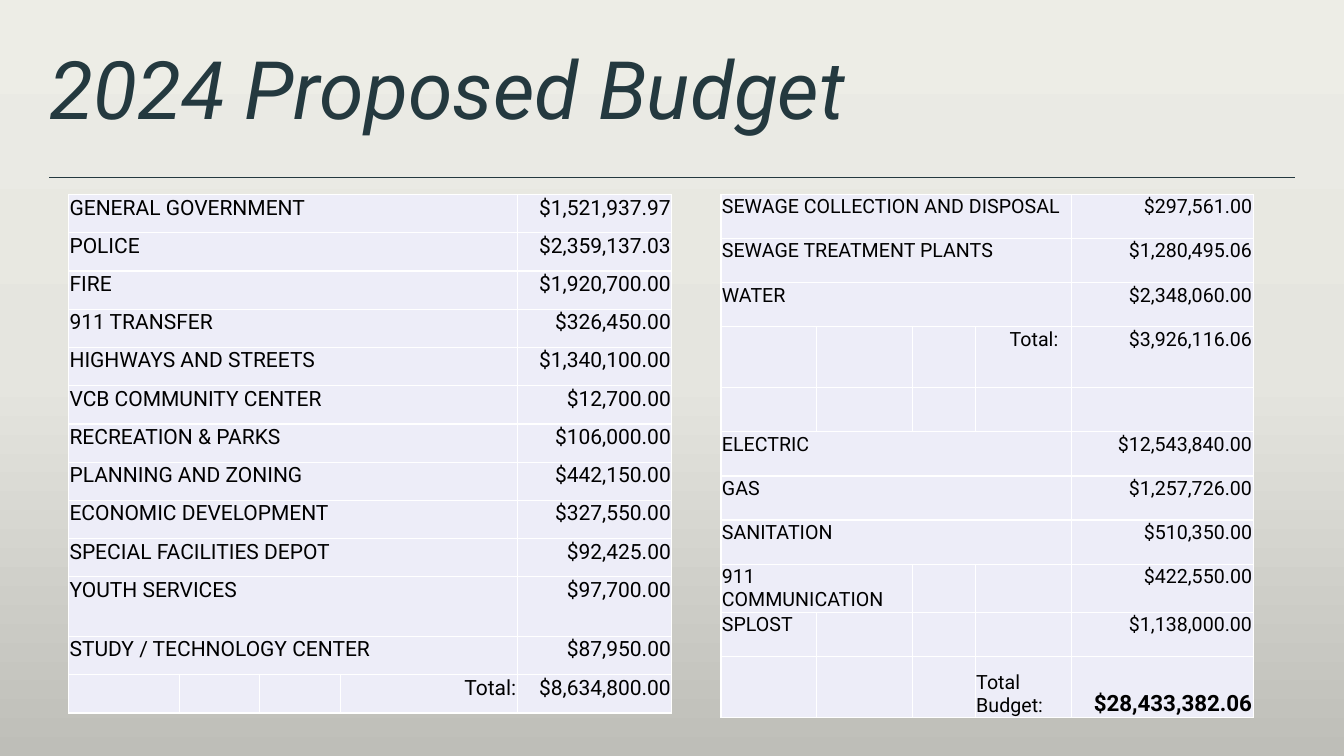
from copy import deepcopy
from lxml.etree import SubElement
from pptx import Presentation
from pptx.dml.color import RGBColor as Color
from pptx.enum.shapes import MSO_CONNECTOR as Connector
from pptx.enum.text import MSO_ANCHOR as Anchor, PP_ALIGN as Align
from pptx.oxml.ns import qn
from pptx.util import Pt

FONT = "Roboto"
COLORS = {"ink": "24393F", "text": "000000", "cell": "EDEDF8", "border": "FFFFFF"}
BACKGROUND = [(0, "EDEDE6"), (0.5, "E5E5DF"), (1, "BEBEB8")]
TITLE = "2024 Proposed Budget"
TOP = 139
INSET = 0.7
LAST_COLUMN = 4

WIDE = {"span": 4}
SUM_LABEL = {"column": 3, "align": Align.RIGHT}
SUM_INDENT = {"column": 3, "indent": 24.6}
GRAND_TOTAL = {"column": 3, "anchor": Anchor.BOTTOM, "bold": True, "size": 16}

TABLES = [
    {
        "left": 515, "size": 14, "columns": [68.2, 68.5, 45, 68.5, 130],
        "row": 31.5, "tall": {3: 43.5, 10: 43.5},
        "lines": [
            ("SEWAGE COLLECTION AND DISPOSAL", "$297,561.00", WIDE),
            ("SEWAGE TREATMENT PLANTS", "$1,280,495.06", WIDE),
            ("WATER", "$2,348,060.00", WIDE),
            ("Total:", "$3,926,116.06", SUM_INDENT),
            ("", "", {}),
            ("ELECTRIC", "$12,543,840.00", WIDE),
            ("GAS", "$1,257,726.00", WIDE),
            ("SANITATION", "$510,350.00", WIDE),
            ("911 COMMUNICATION", "$422,550.00", {"span": 2}),
            ("SPLOST", "$1,138,000.00", {}),
            ("Total Budget:", "$28,433,382.06", GRAND_TOTAL),
        ],
    },
    {
        "left": 49, "size": 15, "columns": [79.2, 57.4, 57.4, 126.5, 110.5],
        "row": 27.3, "tall": {10: 42.7},
        "lines": [
            ("GENERAL GOVERNMENT", "$1,521,937.97", WIDE),
            ("POLICE", "$2,359,137.03", WIDE),
            ("FIRE", "$1,920,700.00", WIDE),
            ("911 TRANSFER", "$326,450.00", WIDE),
            ("HIGHWAYS AND STREETS", "$1,340,100.00", WIDE),
            ("VCB COMMUNITY CENTER", "$12,700.00", WIDE),
            ("RECREATION & PARKS", "$106,000.00", WIDE),
            ("PLANNING AND ZONING", "$442,150.00", WIDE),
            ("ECONOMIC DEVELOPMENT", "$327,550.00", WIDE),
            ("SPECIAL FACILITIES DEPOT", "$92,425.00", WIDE),
            ("YOUTH SERVICES", "$97,700.00", WIDE),
            ("STUDY / TECHNOLOGY CENTER", "$87,950.00", WIDE),
            ("Total:", "$8,634,800.00", SUM_LABEL),
        ],
    },
]


def write(para, text, color, align=Align.LEFT, **font_values):
    para.alignment = align
    span = para.add_run()
    span.text = text
    span.font.color.rgb = Color.from_string(COLORS[color])
    for name, value in {"name": FONT, **font_values}.items():
        setattr(span.font, name, value)


def paint_background(page):
    fill = page.background.fill
    fill.gradient()
    fill.gradient_angle = 270
    stops = page.element.find(".//" + qn("a:gsLst"))
    stops.append(deepcopy(stops[-1]))
    for stop, (position, color) in zip(fill.gradient_stops, BACKGROUND):
        stop.position = position
        stop.color.rgb = Color.from_string(color)


def add_title(page):
    box = page.shapes.add_textbox(Pt(35.3), Pt(31), Pt(890), Pt(65.5))
    frame = box.text_frame
    values = {"word_wrap": True, "vertical_anchor": Anchor.BOTTOM, "margin_left": 0,
              "margin_right": 0, "margin_top": 0, "margin_bottom": 0}
    for name, value in values.items():
        setattr(frame, name, value)
    write(frame.paragraphs[0], TITLE, "ink", size=Pt(57.6), italic=True)


def add_rule(page):
    rule = page.shapes.add_connector(Connector.STRAIGHT, Pt(35.3), Pt(126.7), Pt(925.2), Pt(126.7))
    rule.line.color.rgb = Color.from_string(COLORS["ink"])
    rule.line.width = Pt(0.5)
    SubElement(rule.element.spPr, qn("a:effectLst"))


def style_cell(cell):
    values = {"margin_left": Pt(INSET), "margin_right": Pt(INSET),
              "margin_top": Pt(INSET), "margin_bottom": 0}
    for name, value in values.items():
        setattr(cell, name, value)
    cell.fill.solid()
    cell.fill.fore_color.rgb = Color.from_string(COLORS["cell"])
    properties = cell.fill._xPr
    for index, side in enumerate(("lnL", "lnR", "lnT", "lnB")):
        border = SubElement(properties, qn("a:" + side), w=str(Pt(1)))
        solid = SubElement(border, qn("a:solidFill"))
        SubElement(solid, qn("a:srgbClr"), val=COLORS["border"])
        properties.insert(index, border)


def add_budget(page, budget):
    lines, widths = budget["lines"], budget["columns"]
    heights = [budget["tall"].get(index, budget["row"]) for index in range(len(lines))]
    table = page.shapes.add_table(len(lines), len(widths), Pt(budget["left"]), Pt(TOP),
                                  Pt(sum(widths)), Pt(sum(heights))).table
    table.first_row = table.horz_banding = False
    for column, width in zip(table.columns, widths):
        column.width = Pt(width)
    for row, height in zip(table.rows, heights):
        row.height = Pt(height)
    for cell in table.iter_cells():
        style_cell(cell)
    for index, (label, amount, look) in enumerate(lines):
        label_cell = table.cell(index, look.get("column", 0))
        amount_cell = table.cell(index, LAST_COLUMN)
        if "span" in look:
            label_cell.merge(table.cell(index, look["span"] - 1))
        if not label:
            continue
        label_cell.margin_left = Pt(look.get("indent", INSET))
        label_cell.vertical_anchor = amount_cell.vertical_anchor = look.get("anchor", Anchor.TOP)
        write(label_cell.text_frame.paragraphs[0], label, "text",
              look.get("align", Align.LEFT), size=Pt(budget["size"]))
        write(amount_cell.text_frame.paragraphs[0], amount, "text", Align.RIGHT,
              size=Pt(look.get("size", budget["size"])), bold=look.get("bold", False))


def main():
    deck = Presentation()
    deck.slide_width, deck.slide_height = Pt(960), Pt(540)
    page = deck.slides.add_slide(deck.slide_layouts[6])
    paint_background(page)
    add_title(page)
    add_rule(page)
    for budget in TABLES:
        add_budget(page, budget)
    deck.save("out.pptx")


if __name__ == "__main__":
    main()
